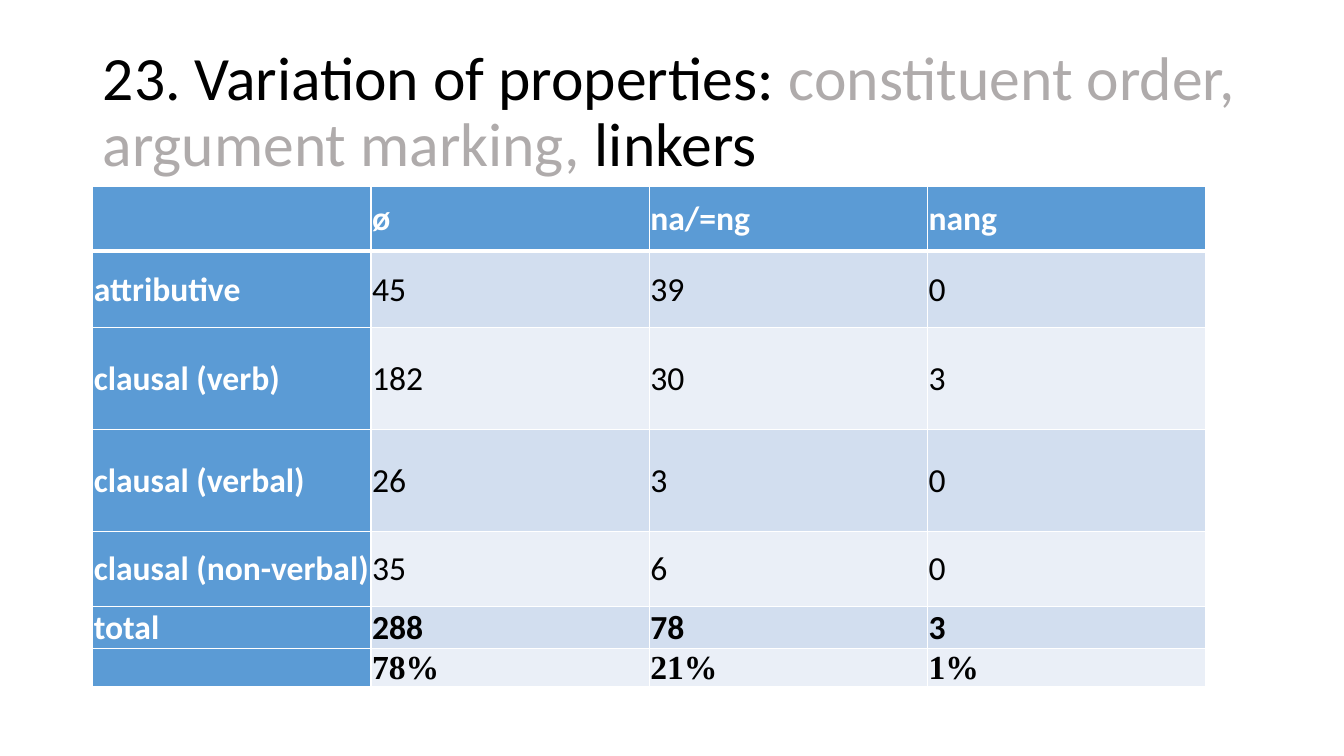
"""Build a slide with a table of linker counts by construction type."""
import dataclasses

import pptx
import pptx.dml.color
import pptx.enum.text
import pptx.oxml
import pptx.oxml.ns
import pptx.util

Inches = pptx.util.Inches
Pt = pptx.util.Pt


@dataclasses.dataclass(frozen=True)
class Theme:
    font: str = "Calibri"
    percent_font: str = "Times New Roman"
    title_size: int = 44
    table_size: int = 24
    ink: str = "000000"
    muted: str = "AFABAB"
    paper: str = "FFFFFF"
    header: str = "5B9BD5"
    bands: tuple = ("D2DEEF", "EAEFF7")
    rule: int = 1
    header_rule: int = 3


def rgb(color):
    return pptx.dml.color.RGBColor.from_string(color)


def add_text(paragraph, text, *, font, size, color, bold=False):
    run = paragraph.add_run()
    run.text = text
    run.font.name = font
    run.font.size = Pt(size)
    run.font.bold = bold
    run.font.color.rgb = rgb(color)


class LinkerSlide:
    def __init__(self, presentation, theme):
        self.theme = theme
        self.slide = presentation.slides.add_slide(presentation.slide_layouts[5])

    def title(self, phrases, left, top, width, height):
        heading = self.slide.shapes.title
        heading.left, heading.top = Inches(left), Inches(top)
        heading.width, heading.height = Inches(width), Inches(height)
        frame = heading.text_frame
        frame.word_wrap = True
        frame.auto_size = pptx.enum.text.MSO_AUTO_SIZE.NONE
        frame.vertical_anchor = pptx.enum.text.MSO_ANCHOR.MIDDLE
        paragraph = frame.paragraphs[0]
        paragraph.alignment = pptx.enum.text.PP_ALIGN.LEFT
        paragraph.line_spacing = 0.9
        for phrase, color in phrases:
            add_text(paragraph, phrase, font=self.theme.font,
                     size=self.theme.title_size, color=color)

    def borders(self, cell, top, bottom):
        rule = self.theme.rule
        properties = cell._tc.get_or_add_tcPr()
        for side, width in zip("LRTB", (rule, rule, top, bottom)):
            properties.append(pptx.oxml.parse_xml(
                f'<a:ln{side} {pptx.oxml.ns.nsdecls("a")} w="{Pt(width)}">'
                f'<a:solidFill><a:srgbClr val="{self.theme.paper}"/></a:solidFill>'
                f'</a:ln{side}>'))

    def cell(self, cell, text, row, column, last_row):
        theme = self.theme
        is_label = row == 0 or column == 0
        self.borders(cell,
                     top=theme.header_rule if row == 1 else theme.rule,
                     bottom=theme.header_rule if row == 0 else theme.rule)
        cell.fill.solid()
        cell.fill.fore_color.rgb = rgb(theme.header if is_label else theme.bands[(row - 1) % 2])
        cell.margin_left = cell.margin_right = cell.margin_top = Inches(0.01)
        cell.margin_bottom = 0
        cell.vertical_anchor = pptx.enum.text.MSO_ANCHOR.MIDDLE
        if text:
            paragraph = cell.text_frame.paragraphs[0]
            paragraph.alignment = pptx.enum.text.PP_ALIGN.JUSTIFY
            add_text(paragraph, text,
                     font=theme.percent_font if row == last_row else theme.font,
                     size=theme.table_size,
                     color=theme.paper if is_label else theme.ink,
                     bold=is_label or row >= last_row - 1)

    def table(self, rows, row_heights, left, top, width):
        columns = len(rows[0])
        table = self.slide.shapes.add_table(
            len(rows), columns, Inches(left), Inches(top),
            Inches(width), Inches(sum(row_heights))).table
        table.first_col = True
        for column in table.columns:
            column.width = Inches(width / columns)
        for row, (values, height) in enumerate(zip(rows, row_heights)):
            table.rows[row].height = Inches(height)
            for column, value in enumerate(values):
                self.cell(table.cell(row, column), value, row, column, len(rows) - 1)


def main():
    theme = Theme()
    presentation = pptx.Presentation()
    presentation.slide_width = Inches(13.33)
    presentation.slide_height = Inches(7.5)

    slide = LinkerSlide(presentation, theme)
    slide.title([("23. Variation of properties: ", theme.ink),
                 ("constituent order, argument marking, ", theme.muted),
                 ("linkers", theme.ink)],
                left=0.92, top=0.4, width=11.5, height=1.45)
    linker_counts = [
        ("", "ø", "na/=ng", "nang"),
        ("attributive", "45", "39", "0"),
        ("clausal (verb)", "182", "30", "3"),
        ("clausal (verbal)", "26", "3", "0"),
        ("clausal (non-verbal)", "35", "6", "0"),
        ("total", "288", "78", "3"),
        ("", "78%", "21%", "1%"),
    ]
    slide.table(linker_counts, (0.64, 0.76, 1.01, 1.01, 0.75, 0.38, 0.38),
                left=0.92, top=1.85, width=11.04)
    presentation.save("out.pptx")


if __name__ == "__main__":
    main()
